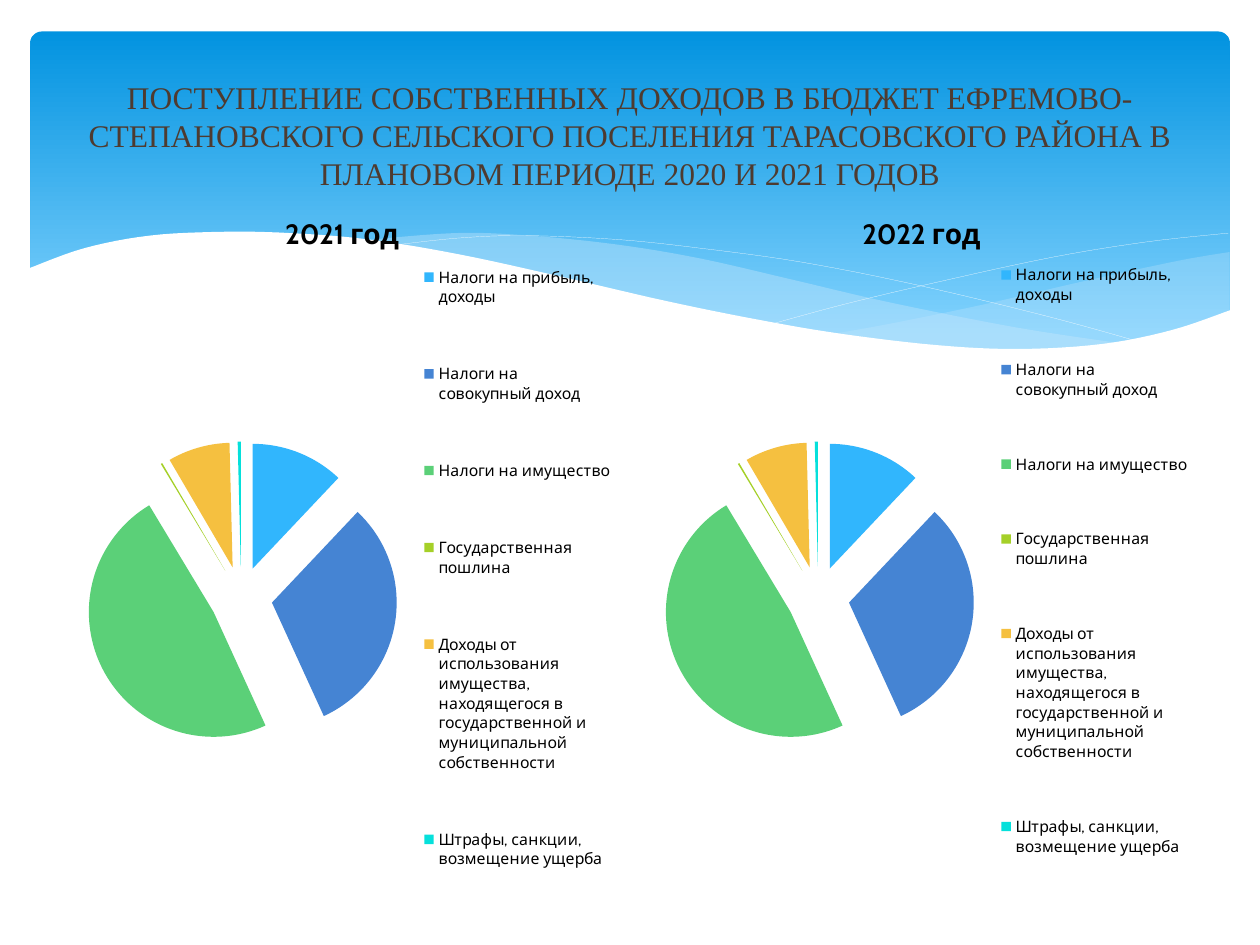
from lxml import etree
from pptx import Presentation, util as u
from pptx.chart.data import CategoryChartData
from pptx.dml.color import RGBColor
from pptx.enum import chart as ch, shapes, text
from pptx.oxml import ns

THEME = {
    "sky": ("0293E0", "83D3FE"), "mist": "C6E7FC", "paper": "FFFFFF",
    "heading": "4E3B30", "ink": "000000",
    "slices": ("31B6FD", "4584D3", "5BD078", "A5D028", "F5C040", "05E0DB"),
    "heading_font": "Times New Roman", "body_font": "Cabin",
    "heading_size": 18, "year_size": 16, "legend_size": 9, "hairline": 0.1,
}

deck = Presentation()
deck.slide_width, deck.slide_height = u.Inches(10), u.Inches(7.5)
slide = deck.slides.add_slide(deck.slide_layouts[6])
# Square grid: 10 columns by 7.5 rows
CELL = deck.slide_width // 10


def smooth(knots, steps=6):
    """Points of a Catmull-Rom curve through the knots."""
    ends = [knots[0], *knots, knots[-1]]
    curve = []
    for a, b, c, d in zip(ends, ends[1:], ends[2:], ends[3:]):
        for step in range(steps):
            t = step / steps
            curve.append(tuple(
                q + t * (r - p) / 2 + t**2 * (2 * p - 5 * q + 4 * r - s) / 2
                + t**3 * (3 * q - p - 3 * r + s) / 2
                for p, q, r, s in zip(a, b, c, d)))
    return curve + [knots[-1]]


def place(part, index, **shares):
    """Set a chart part at given shares of the chart's size."""
    for old in part.findall(ns.qn("c:layout")):
        part.remove(old)
    layout = etree.Element(ns.qn("c:layout"))
    manual = etree.SubElement(layout, ns.qn("c:manualLayout"))
    settings = {"xMode": "edge", "yMode": "edge", **shares}
    if "w" in shares and part.tag == ns.qn("c:plotArea"):
        settings = {"layoutTarget": "inner", **settings}
    for key, value in settings.items():
        etree.SubElement(manual, ns.qn(f"c:{key}")).set("val", str(value))
    part.insert(index, layout)


# Sky panel
sky = slide.shapes.add_shape(
    shapes.MSO_SHAPE.ROUNDED_RECTANGLE,
    *(round(n * CELL) for n in (0.24, 0.25, 9.52, 2.7)))
sky.adjustments[0] = 0.034
sky.shadow.inherit = False
sky.line.fill.background()
sky.fill.gradient()
sky.fill.gradient_angle = 270
for stop, position, color in zip(sky.fill.gradient_stops, (0, 0.9), THEME["sky"]):
    stop.position, stop.color.rgb = position, RGBColor.from_string(color)

# Waves: edges in columns and rows, fill, opacity in percent (no fill: a line)
waves = [
    ([[(9.76, 2), (9.35, 2.07), (8.61, 2.23), (7.79, 2.42), (7.06, 2.57), (6.61, 2.65)],
      [(6.61, 2.65), (7.19, 2.72), (7.69, 2.77), (8.24, 2.77), (8.72, 2.74),
       (9.21, 2.65), (9.76, 2.47)]], THEME["mist"], 29),
    ([[(8.93, 2.73), (8.07, 2.6), (7.06, 2.4), (6.29, 2.22), (5.55, 2.05), (4.89, 1.94),
       (4.2, 1.87), (3.61, 1.85), (2.86, 1.91)],
      [(2.86, 1.91), (3.62, 2.03), (4.49, 2.22), (5.3, 2.4), (6.18, 2.58), (6.95, 2.7),
       (7.61, 2.77), (8.28, 2.78), (8.93, 2.73)]], THEME["mist"], 40),
    ([[(3.09, 1.95), (3.63, 1.89), (4.16, 1.87), (4.89, 1.9), (5.56, 1.97), (6.36, 2.08),
       (7.27, 2.26), (8.31, 2.51), (9.07, 2.72)]], None, 100),
    ([[(6.13, 2.57), (6.72, 2.41), (7.48, 2.23), (8.36, 2.04), (9.1, 1.92),
       (9.75, 1.85)]], None, 100),
    ([[(9.77, 2.46), (9.3, 2.62), (8.75, 2.73), (8.09, 2.77), (7.44, 2.74), (6.68, 2.65),
       (6.03, 2.54), (5.29, 2.39), (4.47, 2.2), (3.65, 2.02), (2.92, 1.9), (2.3, 1.85),
       (1.77, 1.84), (1.19, 1.87), (0.67, 1.97), (0.23, 2.13)],
      [(0.23, 3.29), (9.77, 3.29)]], THEME["paper"], 100),
]
for edges, color, opacity in waves:
    outline = [(round(x * CELL), round(y * CELL))
               for edge in edges for x, y in smooth(edge)]
    pen = slide.shapes.build_freeform(*outline[0])
    pen.add_line_segments(outline[1:], close=color is not None)
    wave = pen.convert_to_shape()
    wave.shadow.inherit = False
    if color:
        wave.line.fill.background()
        wave.fill.solid()
        wave.fill.fore_color.rgb = RGBColor.from_string(color)
        tint = wave.fill._xPr.find(".//" + ns.qn("a:srgbClr"))
        etree.SubElement(tint, ns.qn("a:alpha")).set("val", str(opacity * 1000))
    else:
        wave.fill.background()
        wave.line.color.rgb = RGBColor.from_string(THEME["paper"])
        wave.line.width = u.Pt(THEME["hairline"])

# Heading
heading = slide.shapes.add_textbox(
    *(round(n * CELL) for n in (0.5, 0.52, 9, 1.1))).text_frame
heading.word_wrap = True
heading.vertical_anchor = text.MSO_ANCHOR.MIDDLE
heading.text = ("ПОСТУПЛЕНИЕ СОБСТВЕННЫХ ДОХОДОВ В БЮДЖЕТ ЕФРЕМОВО-СТЕПАНОВСКОГО "
                "СЕЛЬСКОГО ПОСЕЛЕНИЯ ТАРАСОВСКОГО РАЙОНА В ПЛАНОВОМ ПЕРИОДЕ "
                "2020 И 2021 ГОДОВ")
heading.paragraphs[0].alignment = text.PP_ALIGN.CENTER
heading_font = heading.paragraphs[0].font
heading_font.color.rgb = RGBColor.from_string(THEME["heading"])
for key, value in {"name": THEME["heading_font"],
                   "size": u.Pt(THEME["heading_size"])}.items():
    setattr(heading_font, key, value)

# Income pies, one for each year
income = {
    "Налоги на прибыль, доходы": 12,
    "Налоги на совокупный доход": 31,
    "Налоги на имущество": 48,
    "Государственная пошлина": 0.2,
    "Доходы от использования имущества, находящегося в государственной "
    "и муниципальной собственности": 8,
    "Штрафы, санкции, возмещение ущерба": 0.4,
}
for year, left, legend_height in (("2021 год", 0.5, 0.97), ("2022 год", 5.08, 0.95)):
    data = CategoryChartData()
    data.categories = list(income)
    data.add_series(year, list(income.values()))
    pie = slide.shapes.add_chart(
        ch.XL_CHART_TYPE.PIE,
        *(round(n * CELL) for n in (left, 1.55, 4.42, 5.86)), data).chart
    pie.has_title = pie.has_legend = True
    pie.chart_title.include_in_layout = False
    pie.chart_title.text_frame.text = year
    pie.legend.position = ch.XL_LEGEND_POSITION.RIGHT
    pie.legend.include_in_layout = False
    year_font = pie.chart_title.text_frame.paragraphs[0].runs[0].font
    for font, size, bold in ((pie.font, THEME["legend_size"], False),
                             (year_font, THEME["year_size"], True)):
        font.color.rgb = RGBColor.from_string(THEME["ink"])
        for key, value in {"name": THEME["body_font"], "size": u.Pt(size),
                           "bold": bold}.items():
            setattr(font, key, value)

    # Slices pulled apart
    pie.plots[0].vary_by_categories = True
    series = pie.plots[0].series[0]
    for index, color in enumerate(THEME["slices"]):
        slice_fill = series.points[index].format.fill
        slice_fill.solid()
        slice_fill.fore_color.rgb = RGBColor.from_string(color)
    explosion = etree.Element(ns.qn("c:explosion"), val="25")
    series._element.find(ns.qn("c:dPt")).addprevious(explosion)

    # Year, pie and legend within the chart, the legend centred on its height
    place(pie.chart_title._element, 1, x=0.39, y=0.02)
    place(pie._chartSpace.chart.plotArea, 0, x=0.04, y=0.33, w=0.56, h=0.43)
    place(pie.legend._element, 1, x=0.65, y=0.02, w=0.34, h=legend_height)

deck.save("out.pptx")
